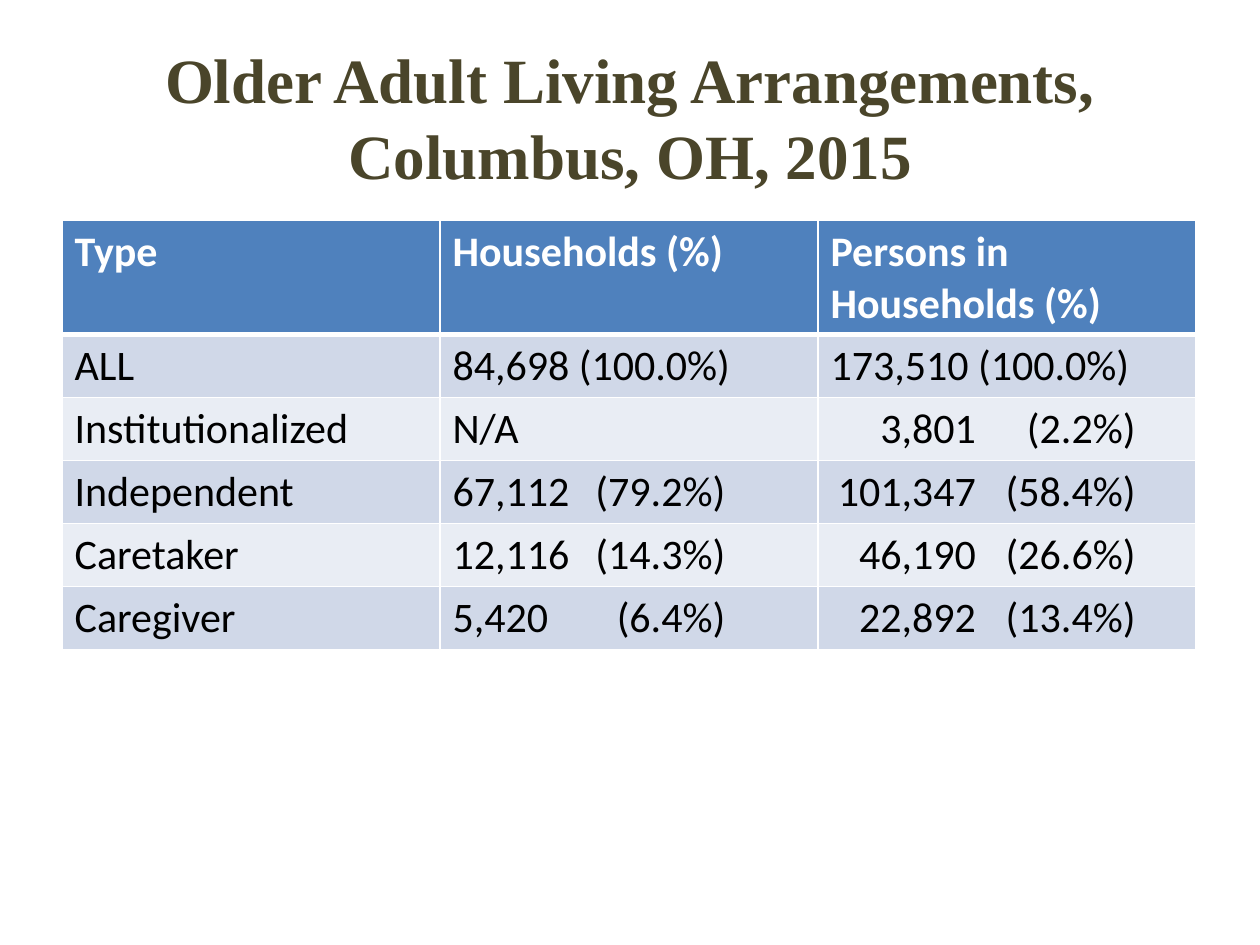
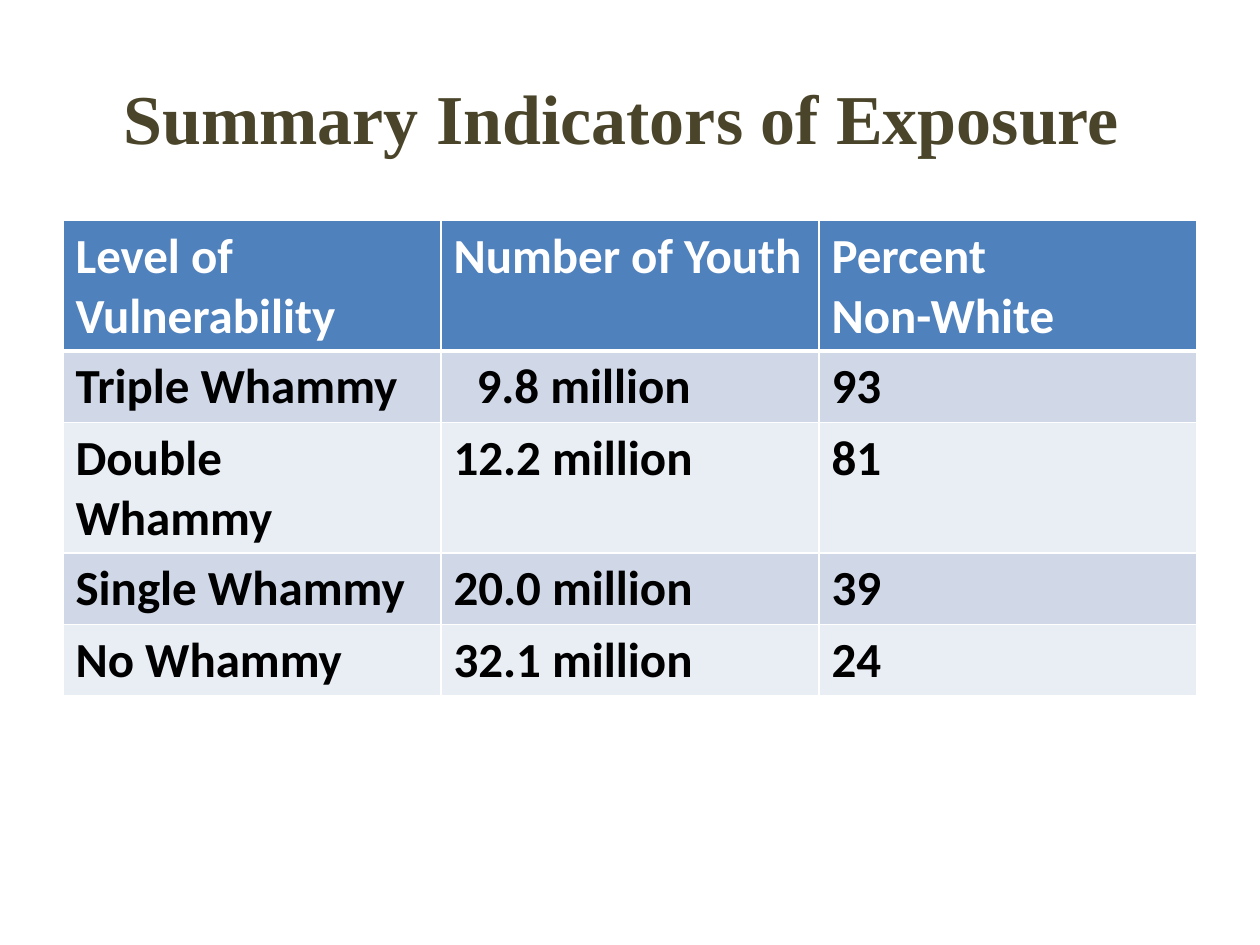
import pptx
import pptx.dml.color
import pptx.enum.text
import pptx.oxml.ns
import pptx.util
from lxml import etree

Cm = pptx.util.Cm
Pt = pptx.util.Pt
PP_ALIGN = pptx.enum.text.PP_ALIGN

COLORS = {
    "title": "4A452A",
    "header": "4F81BD",
    "band_dark": "D0D8E8",
    "band_light": "E9EDF4",
    "white": "FFFFFF",
    "black": "000000",
}
TITLE_FONT = "Times New Roman"
TABLE_FONT = "Calibri"

SLIDES = [
    {
        "title": "Older Adult Living Arrangements, Columbus, OH, 2015",
        "title_size": 36,
        "left": 1.25,
        "size": 24,
        "body_bold": False,
        "tabs": {1: [5.5], 2: [2.93, 6.15]},
        "rows": [
            ("Type", "Households (%)", "Persons in Households (%)"),
            ("ALL", "84,698 (100.0%)", "173,510 (100.0%)"),
            ("Institutionalized", "N/A", "\t3,801\t(2.2%)"),
            ("Independent", "67,112\t(79.2%)", "\t101,347\t(58.4%)"),
            ("Caretaker", "12,116\t(14.3%)", "\t46,190\t(26.6%)"),
            ("Caregiver", "5,420\t(6.4%)", "\t22,892\t(13.4%)"),
        ],
    },
    {
        "title": "Summary Indicators of Exposure ",
        "title_size": 40,
        "left": 1.27,
        "size": 28,
        "body_bold": True,
        "tabs": {1: [4.78]},
        "rows": [
            ("Level of Vulnerability", "Number of Youth", "Percent\nNon-White"),
            ("Triple Whammy", "\t9.8 million", "93"),
            ("Double Whammy", "12.2 million", "81"),
            ("Single Whammy", "20.0 million", "39"),
            ("No Whammy", "32.1 million", "24"),
        ],
    },
]

TABLE_TOP, COL_WIDTH, ROW_HEIGHT = 4.45, 7.62, 1.03


def rgb(name):
    return pptx.dml.color.RGBColor.from_string(COLORS[name])


def write_text(tf, text, size, color, font=TABLE_FONT, bold=False,
               align=PP_ALIGN.LEFT, tabs=()):
    for i, line in enumerate(text.split("\n")):
        p = tf.add_paragraph() if i else tf.paragraphs[0]
        p.alignment = align
        if "\t" in line:
            tab_list = etree.SubElement(p._p.get_or_add_pPr(), pptx.oxml.ns.qn("a:tabLst"))
            for pos in tabs:
                etree.SubElement(tab_list, pptx.oxml.ns.qn("a:tab"),
                                 pos=str(Cm(pos)), algn="r")
        r = p.add_run()
        r.text = line
        r.font.name = font
        r.font.size = Pt(size)
        r.font.bold = bold
        r.font.color.rgb = rgb(color)


def set_borders(cell, top=1, bottom=1):
    tc_pr = cell._tc.get_or_add_tcPr()
    for side, width in (("L", 1), ("R", 1), ("T", top), ("B", bottom)):
        ln = etree.SubElement(tc_pr, pptx.oxml.ns.qn("a:ln" + side), w=str(Pt(width)))
        fill = etree.SubElement(ln, pptx.oxml.ns.qn("a:solidFill"))
        etree.SubElement(fill, pptx.oxml.ns.qn("a:srgbClr"), val=COLORS["white"])


def add_title(slide, text, size):
    sp = slide.shapes.add_textbox(Cm(1.27), Cm(0.76), Cm(22.86), Cm(3.18))
    tf = sp.text_frame
    tf.word_wrap = True
    tf.vertical_anchor = pptx.enum.text.MSO_ANCHOR.MIDDLE
    write_text(tf, text, size, "title", font=TITLE_FONT, bold=True, align=PP_ALIGN.CENTER)


def add_table(slide, content):
    rows = content["rows"]
    n_rows, n_cols = len(rows), len(rows[0])
    table = slide.shapes.add_table(
        n_rows, n_cols, Cm(content["left"]), Cm(TABLE_TOP),
        Cm(COL_WIDTH * n_cols), Cm(ROW_HEIGHT * n_rows)).table
    for i, row in enumerate(rows):
        header = i == 0
        band = "header" if header else "band_dark" if i % 2 else "band_light"
        for j, text in enumerate(row):
            cell = table.cell(i, j)
            set_borders(cell, top=3 if i == 1 else 1, bottom=3 if header else 1)
            cell.fill.solid()
            cell.fill.fore_color.rgb = rgb(band)
            write_text(cell.text_frame, text, content["size"],
                       "white" if header else "black",
                       bold=header or content["body_bold"],
                       tabs=content["tabs"].get(j, ()))


def main():
    prs = pptx.Presentation()
    prs.slide_width, prs.slide_height = Cm(25.4), Cm(19.05)
    for content in SLIDES:
        slide = prs.slides.add_slide(prs.slide_layouts[6])
        add_title(slide, content["title"], content["title_size"])
        add_table(slide, content)
    prs.save("out.pptx")


if __name__ == "__main__":
    main()
